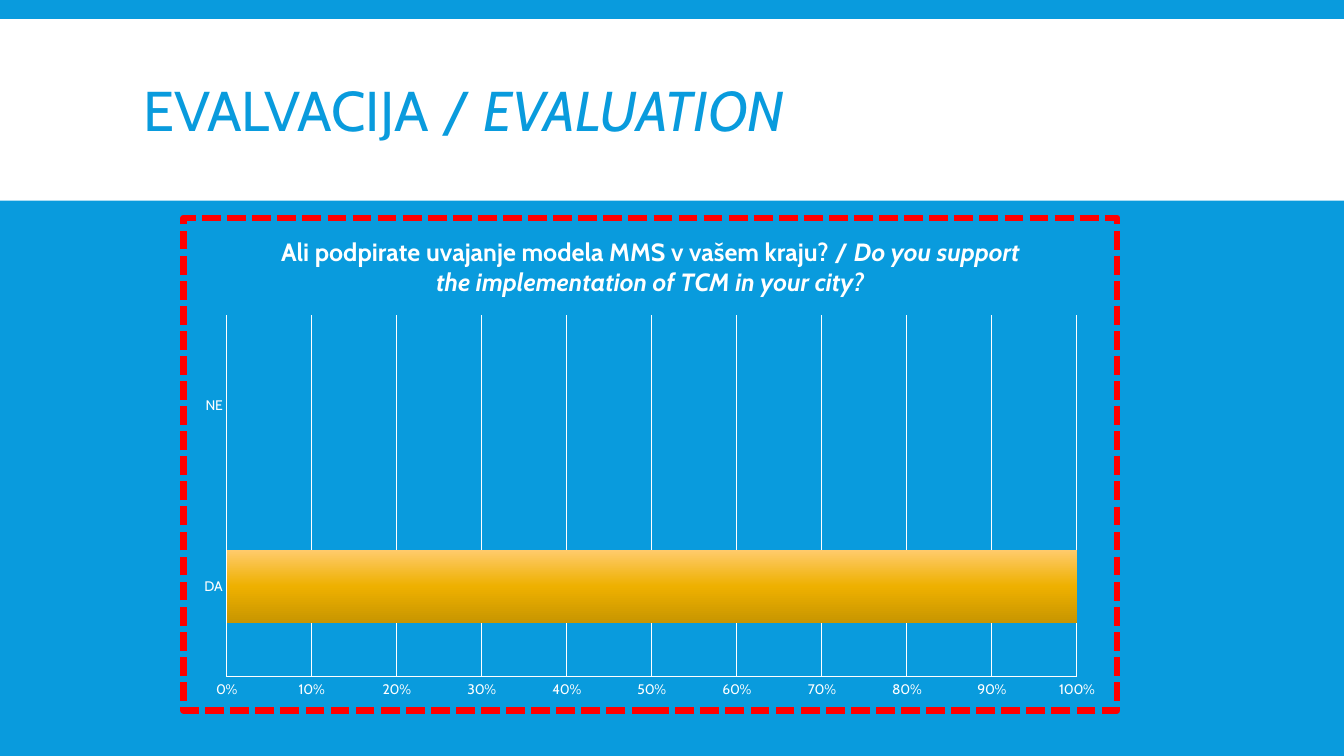
import pptx
import pptx.chart.data
import pptx.dml.color
import pptx.enum.chart
import pptx.enum.dml
import pptx.enum.shapes
import pptx.enum.text
import pptx.oxml
import pptx.oxml.ns
import pptx.util
from pptx.util import Inches

COLORS = {"blue": "099BDD", "white": "FFFFFF", "red": "FF0000",
          "gold_light": "FFCB6B", "gold": "EEB000", "gold_dark": "C89600"}
FONT = "Cabin"


def color(name):
    return pptx.dml.color.RGBColor.from_string(COLORS[name])


def add_spans(para, texts, size, name, bold):
    for text, italic in texts:
        span = para.add_run()
        span.text = text
        span.font.name = FONT
        span.font.size = pptx.util.Pt(size)
        span.font.bold = bold
        span.font.italic = italic
        span.font.color.rgb = color(name)


deck = pptx.Presentation()
deck.slide_width, deck.slide_height = Inches(13.33), Inches(7.5)
page = deck.slides.add_slide(deck.slide_layouts[5])
page.background.fill.solid()
page.background.fill.fore_color.rgb = color("blue")

band = page.shapes.add_shape(pptx.enum.shapes.MSO_SHAPE.RECTANGLE,
                             0, Inches(0.19), Inches(13.33), Inches(1.8))
band.shadow.inherit = False
band.fill.solid()
band.fill.fore_color.rgb = color("white")
band.line.fill.background()

title = page.shapes.title
band._element.addnext(title._element)
title.left, title.top = Inches(1.32), Inches(0.31)
title.width, title.height = Inches(10.7), Inches(1.65)
title.text_frame.vertical_anchor = pptx.enum.text.MSO_ANCHOR.MIDDLE
title.text_frame.word_wrap = True
para = title.text_frame.paragraphs[0]
para.alignment = pptx.enum.text.PP_ALIGN.LEFT
para.line_spacing = 0.85
add_spans(para, [("EVALVACIJA / ", False), ("EVALUATION", True)], 40, "blue", False)

answers = pptx.chart.data.CategoryChartData(number_format="0%")
answers.categories = ["DA", "NE"]
answers.add_series("Series 1", [1, 0])
chart = page.shapes.add_chart(pptx.enum.chart.XL_CHART_TYPE.BAR_CLUSTERED,
                              Inches(1.79), Inches(2.13), Inches(9.32), Inches(4.95),
                              answers).chart
chart.has_legend = False
chart.font.name = FONT
chart.font.size = pptx.util.Pt(10)
chart.font.color.rgb = color("white")
chart.has_title = True
chart.chart_title.include_in_layout = False
add_spans(chart.chart_title.text_frame.paragraphs[0],
          [("Ali podpirate uvajanje modela MMS v vašem kraju? / ", False),
           ("Do you support the implementation of TCM in your city?", True)],
          18, "white", True)

for axis in (chart.category_axis, chart.value_axis):
    axis.major_tick_mark = pptx.enum.chart.XL_TICK_MARK.NONE
    axis.minor_tick_mark = pptx.enum.chart.XL_TICK_MARK.NONE
    axis.format.line.color.rgb = color("white")
    axis.format.line.width = pptx.util.Pt(0.75)
chart.category_axis.has_major_gridlines = False
scale = chart.value_axis
scale.minimum_scale, scale.maximum_scale, scale.major_unit = 0, 1, 0.1
scale.tick_labels.number_format = "0%"
scale.tick_labels.number_format_is_linked = False
scale.has_major_gridlines = True
scale.major_gridlines.format.line.color.rgb = color("white")
scale.major_gridlines.format.line.width = pptx.util.Pt(0.75)

plot = chart.plots[0]
plot.gap_width = 150
plot.vary_by_categories = False
bar_fill = plot.series[0].format.fill
bar_fill.gradient()
bar_fill.gradient_angle = 270
stop_list = bar_fill.gradient_stops[0]._gs.getparent()
stop_list.insert(1, pptx.oxml.parse_xml(
    f'<a:gs {pptx.oxml.ns.nsdecls("a")} pos="50000"><a:srgbClr val="{COLORS["gold"]}"/></a:gs>'))
for stop, name, position in zip(bar_fill.gradient_stops,
                                ("gold_light", "gold", "gold_dark"), (0, 0.5, 1)):
    stop.color.rgb = color(name)
    stop.position = position

space = chart._chartSpace
plot_area = space.chart.plotArea
for layout in plot_area.findall(pptx.oxml.ns.qn("c:layout")):
    plot_area.remove(layout)
bounds = "".join(f'<c:{key} val="{value}"/>' for key, value in
                 (("x", 0.046), ("y", 0.197), ("w", 0.911), ("h", 0.735)))
plot_area.insert(0, pptx.oxml.parse_xml(
    f'<c:layout {pptx.oxml.ns.nsdecls("c")}><c:manualLayout><c:layoutTarget val="inner"/>'
    f'<c:xMode val="edge"/><c:yMode val="edge"/>{bounds}</c:manualLayout></c:layout>'))
space.chart.addnext(pptx.oxml.parse_xml(
    f'<c:spPr {pptx.oxml.ns.nsdecls("c", "a")}><a:noFill/><a:ln w="{pptx.util.Pt(4.5)}">'
    f'<a:solidFill><a:srgbClr val="{COLORS["red"]}"/></a:solidFill>'
    '<a:prstDash val="sysDash"/></a:ln></c:spPr>'))

deck.save("out.pptx")
